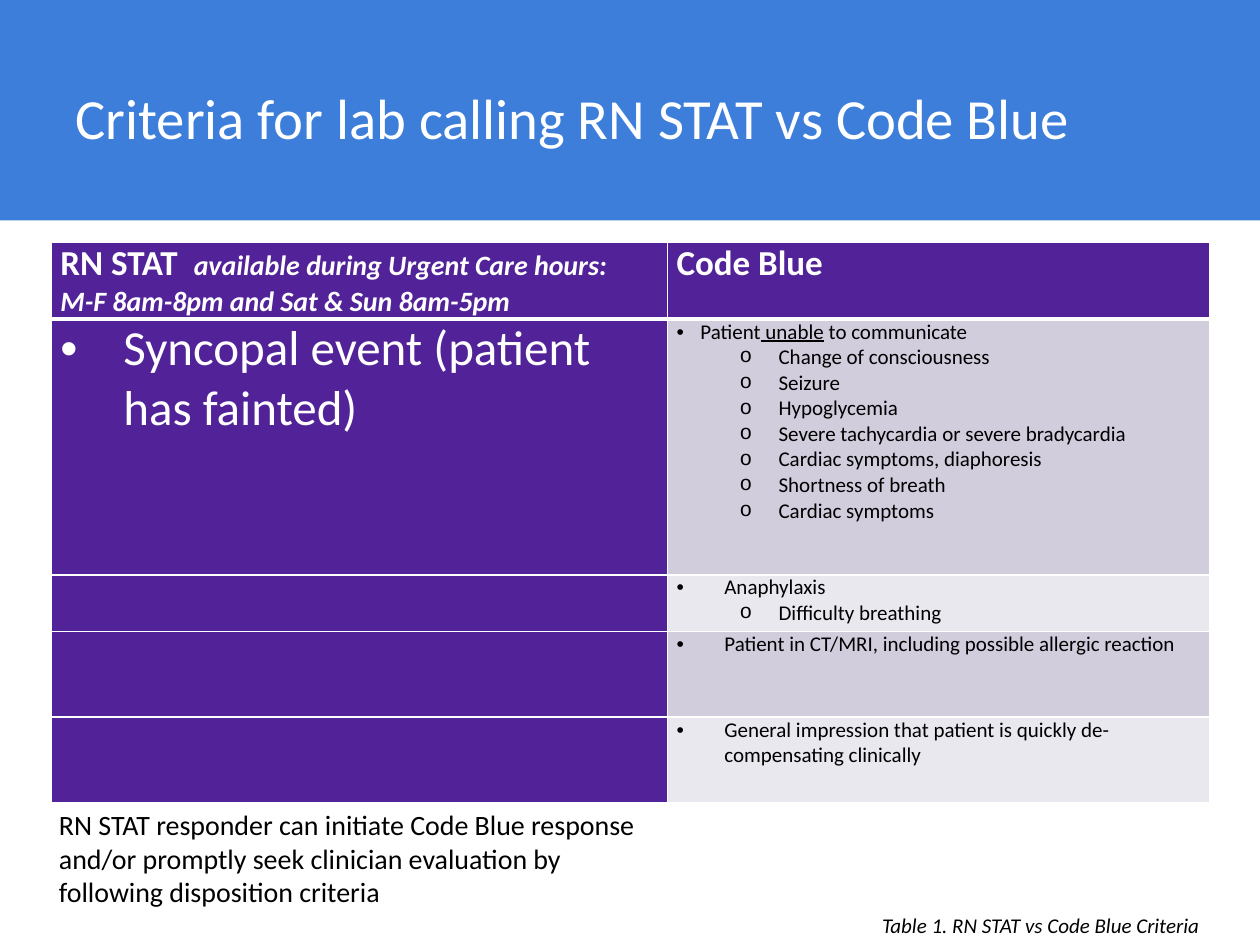
from lxml import etree
from pptx import Presentation
from pptx.dml.color import RGBColor
from pptx.enum.shapes import MSO_SHAPE
from pptx.enum.text import MSO_ANCHOR, MSO_AUTO_SIZE, PP_ALIGN
from pptx.oxml.ns import qn
from pptx.util import Inches, Pt

RECTANGLE = MSO_SHAPE.RECTANGLE
MIDDLE = MSO_ANCHOR.MIDDLE
NO_AUTOFIT = MSO_AUTO_SIZE.NONE
LEFT = PP_ALIGN.LEFT

FONT = "Calibri"
BLUE, PURPLE, WHITE, BLACK = "3D7EDB", "522398", "FFFFFF", "000000"
BANDS = ("D1CDDD", "E9E8EF")
COLUMN_WIDTHS = (4.89, 4.3)
ROW_HEIGHTS = (0.59, 2.03, 0.45, 0.68, 0.68)
TITLE = "Criteria for lab calling RN STAT vs Code Blue"
HOURS = ("available during Urgent Care hours:", "M-F 8am-8pm and Sat & Sun 8am-5pm")
SYMPTOMS = (
    "Change of consciousness",
    "Seizure",
    "Hypoglycemia",
    "Severe tachycardia or severe bradycardia",
    "Cardiac symptoms, diaphoresis",
    "Shortness of breath",
    "Cardiac symptoms",
)
CRITERIA = (
    ([("Patient", False), (" unable", True), (" to communicate", False)], SYMPTOMS, 0.19),
    ([("Anaphylaxis", False)], ("Difficulty breathing",), 0.38),
    ([("Patient in CT/MRI, including possible allergic reaction", False)], (), 0.38),
    ([("General impression that patient is quickly de-compensating clinically", False)], (), 0.38),
)
RESPONDER_NOTE = (
    "RN STAT responder can initiate Code Blue response and/or promptly seek "
    "clinician evaluation by following disposition criteria"
)


def color(value):
    return RGBColor.from_string(value)


def paint(item, value):
    item.fill.solid()
    item.fill.fore_color.rgb = color(value)


def add_text(paragraph, text, size=12, fill=BLACK, bold=False, italic=False, underline=False):
    run = paragraph.add_run()
    run.text = text
    font = run.font
    font.name, font.size, font.color.rgb = FONT, Pt(size), color(fill)
    font.bold, font.italic, font.underline = bold, italic, underline


def next_paragraph(text_frame):
    first = text_frame.paragraphs[0]
    return text_frame.add_paragraph() if first.runs else first


def add_bullet(text_frame, character, indent, hanging, level=0):
    paragraph = next_paragraph(text_frame)
    paragraph.level = level
    properties = paragraph._p.get_or_add_pPr()
    properties.set("marL", str(Inches(indent)))
    properties.set("indent", str(-Inches(hanging)))
    typeface = "Courier New" if character == "o" else "Arial"
    etree.SubElement(properties, qn("a:buFont"), typeface=typeface)
    etree.SubElement(properties, qn("a:buChar"), char=character)
    return paragraph


def set_borders(cell, **widths):
    properties = cell._tc.get_or_add_tcPr()
    for side in "LRTB":
        line = etree.SubElement(properties, qn(f"a:ln{side}"), w=str(Pt(widths.get(side, 1))))
        fill = etree.SubElement(line, qn("a:solidFill"))
        etree.SubElement(fill, qn("a:srgbClr"), val=WHITE)


def add_banner(slide, width, height):
    shape = slide.shapes.add_shape(RECTANGLE, 0, 0, width, height)
    shape.shadow.inherit = False
    paint(shape, BLUE)
    shape.line.fill.background()
    tree = slide.shapes._spTree
    tree.remove(shape._element)
    tree.insert(2, shape._element)


def add_title(slide):
    title = slide.shapes.title
    title.left, title.top = Inches(0.5), Inches(0.3)
    title.width, title.height = Inches(8.67), Inches(1.25)
    title.text_frame.auto_size = NO_AUTOFIT
    title.text_frame.vertical_anchor = MIDDLE
    paragraph = title.text_frame.paragraphs[0]
    paragraph.alignment = LEFT
    add_text(paragraph, TITLE, size=32.4, fill=WHITE)


def add_note(slide, text, left, top, width, height, **text_format):
    frame = slide.shapes.add_textbox(*map(Inches, (left, top, width, height))).text_frame
    frame.word_wrap = True
    add_text(frame.paragraphs[0], text, **text_format)
    return frame


def add_grid(slide):
    size = (sum(COLUMN_WIDTHS), sum(ROW_HEIGHTS))
    table = slide.shapes.add_table(
        len(ROW_HEIGHTS), len(COLUMN_WIDTHS), *map(Inches, (0.41, 1.92, *size))
    ).table
    for column, width in zip(table.columns, COLUMN_WIDTHS):
        column.width = Inches(width)
    for index, (row, height) in enumerate(zip(table.rows, ROW_HEIGHTS)):
        row.height = Inches(height)
        for position, cell in enumerate(row.cells):
            cell.margin_left = cell.margin_right = Inches(0.07)
            cell.margin_top = cell.margin_bottom = 0
            set_borders(cell, T=3 if index == 1 else 1, B=3 if index == 0 else 1)
            paint(cell, BANDS[(index - 1) % 2] if index and position else PURPLE)
    return table


def fill_headings(table):
    stat, code_blue = (table.cell(0, column).text_frame for column in range(2))
    add_text(stat.paragraphs[0], "RN STAT  ", size=20, fill=WHITE, bold=True)
    for paragraph, text in zip((stat.paragraphs[0], stat.add_paragraph()), HOURS):
        add_text(paragraph, text, size=16, fill=WHITE, bold=True, italic=True)
    add_text(code_blue.paragraphs[0], "Code Blue", size=20, fill=WHITE, bold=True)


def fill_criteria(table):
    event = add_bullet(table.cell(1, 0).text_frame, "•", 0.5, 0.5)
    add_text(event, "Syncopal event (patient has fainted)", size=28, fill=WHITE)
    for row, (parts, details, indent) in enumerate(CRITERIA, start=1):
        frame = table.cell(row, 1).text_frame
        paragraph = add_bullet(frame, "•", indent, indent)
        for text, underline in parts:
            add_text(paragraph, text, underline=underline)
        for detail in details:
            add_text(add_bullet(frame, "o", 0.81, 0.31, level=1), detail)


def main():
    presentation = Presentation()
    presentation.slide_width, presentation.slide_height = Inches(10), Inches(7.5)
    slide = presentation.slides.add_slide(presentation.slide_layouts[5])
    add_banner(slide, presentation.slide_width, Inches(1.75))
    add_title(slide)
    table = add_grid(slide)
    fill_headings(table)
    fill_criteria(table)
    caption = add_note(
        slide, "Table 1. RN STAT vs Code Blue Criteria", 6.75, 7.19, 3.25, 0.3, italic=True
    )
    caption.margin_left = Inches(0.25)
    caption.vertical_anchor = MIDDLE
    add_note(slide, RESPONDER_NOTE, 0.37, 6.36, 4.9, 0.91, size=16)
    presentation.save("out.pptx")


if __name__ == "__main__":
    main()
